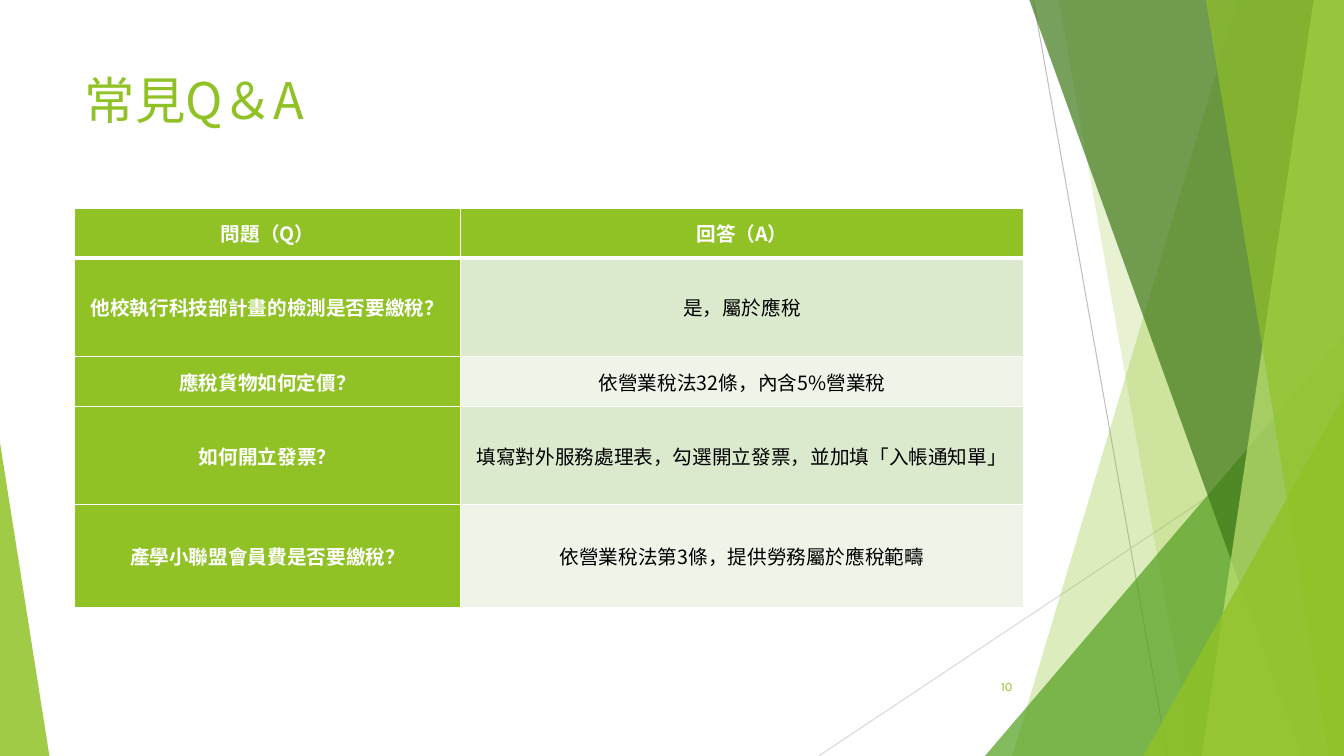
from dataclasses import dataclass

from lxml import etree
from pptx import Presentation
from pptx.dml.color import RGBColor
from pptx.enum.shapes import MSO_CONNECTOR, MSO_SHAPE
from pptx.enum.text import MSO_ANCHOR, MSO_AUTO_SIZE, PP_ALIGN
from pptx.oxml.ns import qn
from pptx.util import Inches, Pt

STRAIGHT = MSO_CONNECTOR.STRAIGHT
TRIANGLE = MSO_SHAPE.ISOSCELES_TRIANGLE
TOP, MIDDLE = MSO_ANCHOR.TOP, MSO_ANCHOR.MIDDLE
LEFT, CENTER, RIGHT = PP_ALIGN.LEFT, PP_ALIGN.CENTER, PP_ALIGN.RIGHT


@dataclass(frozen=True)
class Theme:
    green: str = "90C226"
    leaf: str = "54A021"
    forest: str = "3F7819"
    lime: str = "C0E474"
    bands: tuple = ("DBE9CD", "EEF4E8")
    white: str = "FFFFFF"
    black: str = "000000"
    rays: tuple = ("BFBFBF", "D9D9D9")
    font: str = "Noto Sans CJK SC"
    number_font: str = "Karla"
    title_size: int = 36
    table_size: int = 14
    number_size: int = 9


theme = Theme()


def write(frame, text, size, color, align, anchor, font=theme.font, bold=False):
    frame.word_wrap = True
    frame.vertical_anchor = anchor
    para = frame.paragraphs[0]
    para.alignment = align
    span = para.add_run()
    span.text = text
    span.font.size = Pt(size)
    span.font.bold = bold
    span.font.name = font
    span.font.color.rgb = RGBColor.from_string(color)
    etree.SubElement(span.font._element, qn("a:ea"), typeface=font)


def paint(shape, color, opacity):
    """Fill a shape without outline or shadow; opacity is in percent."""
    shape.shadow.inherit = False
    shape.line.fill.background()
    shape.fill.solid()
    shape.fill.fore_color.rgb = RGBColor.from_string(color)
    tint = shape.fill._xPr.find(qn("a:solidFill"))[0]
    etree.SubElement(tint, qn("a:alpha"), val=str(opacity * 1000))


deck = Presentation()
deck.slide_width, deck.slide_height = Inches(13.33), Inches(7.5)
page = deck.slides.add_slide(deck.slide_layouts[5])

# The page is a grid of 100 columns by 100 rows
COL, ROW = deck.slide_width / 100, deck.slide_height / 100

# Thin rays: start and end
rays = [(76.89, 0, 86.87, 100), (100, 53.73, 60.92, 100)]
for (x1, y1, x2, y2), color in zip(rays, theme.rays):
    ray = page.shapes.add_connector(
        STRAIGHT, int(x1 * COL), int(y1 * ROW), int(x2 * COL), int(y2 * ROW))
    ray.line.color.rgb = RGBColor.from_string(color)
    ray.line.width = Pt(0.75)
    etree.SubElement(ray._element.spPr, qn("a:effectLst"))

# Facets from back to front.
# A blade runs to the right edge: top column, bottom column.
# A corner stands on the bottom edge: left column, top row, width, apex side.
facets = [
    ("blade", (92.12, 75.32), theme.green, 30),
    ("blade", (78.77, 88.75), theme.green, 20),
    ("corner", (73.29, 44.4, 26.71, 1), theme.leaf, 72),
    ("blade", (76.59, 96.85), theme.forest, 70),
    ("blade", (97.75, 89.42), theme.lime, 70),
    ("blade", (89.72, 98.87), theme.green, 65),
    ("corner", (85.07, 52.4, 14.93, 1), theme.green, 80),
    ("corner", (0, 58.53, 3.68, 0), theme.green, 85),
]
for kind, place, color, opacity in facets:
    if kind == "blade":
        top_col, bottom_col = place
        outline = page.shapes.build_freeform(int(top_col * COL), 0)
        outline.add_line_segments([
            (int(x * COL), int(y * ROW))
            for x, y in ((100, 0), (100, 100), (bottom_col, 100))])
        facet = outline.convert_to_shape()
    else:
        left, top, width, apex = place
        facet = page.shapes.add_shape(
            TRIANGLE, int(left * COL), int(top * ROW),
            int(width * COL), int((100 - top) * ROW))
        facet.adjustments[0] = apex
    paint(facet, color, opacity)

title = page.shapes.title
title.left, title.top = int(5.55 * COL), int(8.53 * ROW)
title.width, title.height = int(70.52 * COL), int(19.2 * ROW)
title.text_frame.auto_size = MSO_AUTO_SIZE.NONE
write(title.text_frame, "常見Q＆A", theme.title_size, theme.green, LEFT, TOP)

entries = [
    ("問題（Q）", "回答（A）"),
    ("他校執行科技部計畫的檢測是否要繳稅？", "是，屬於應稅"),
    ("應稅貨物如何定價？", "依營業稅法32條，內含5%營業稅"),
    ("如何開立發票？", "填寫對外服務處理表，勾選開立發票，並加填「入帳通知單」"),
    ("產學小聯盟會員費是否要繳稅？", "依營業稅法第3條，提供勞務屬於應稅範疇"),
]
column_spans = [28.73, 41.86]
row_spans = [6.53, 13.07, 6.53, 13.07, 13.6]

table = page.shapes.add_table(
    len(entries), len(column_spans), int(5.55 * COL), int(27.6 * ROW),
    int(sum(column_spans) * COL), int(sum(row_spans) * ROW)).table
for column, span_cols in zip(table.columns, column_spans):
    column.width = int(span_cols * COL)
for table_row, span_rows in zip(table.rows, row_spans):
    table_row.height = int(span_rows * ROW)

for r, entry in enumerate(entries):
    for c, text in enumerate(entry):
        cell = table.cell(r, c)
        cell.margin_left = cell.margin_right = 0
        cell.margin_top = cell.margin_bottom = 0
        strong = r == 0 or c == 0
        write(cell.text_frame, text, theme.table_size,
              theme.white if strong else theme.black, CENTER, MIDDLE, bold=strong)
        cell.vertical_anchor = MIDDLE
        for side in ("L", "R", "T", "B"):
            under_header = (r, side) in ((0, "B"), (1, "T"))
            border = etree.SubElement(
                cell._tc.get_or_add_tcPr(), qn(f"a:ln{side}"),
                w=str(Pt(3 if under_header else 1)))
            ink = etree.SubElement(border, qn("a:solidFill"))
            etree.SubElement(ink, qn("a:srgbClr"), val=theme.white)
        cell.fill.solid()
        cell.fill.fore_color.rgb = RGBColor.from_string(
            theme.green if strong else theme.bands[(r - 1) % 2])

number_box = page.shapes.add_textbox(
    int(70.44 * COL), int(88.13 * ROW), int(5.63 * COL), int(5.33 * ROW))
write(number_box.text_frame, "10", theme.number_size, theme.green, RIGHT, MIDDLE,
      font=theme.number_font)

deck.save("out.pptx")
